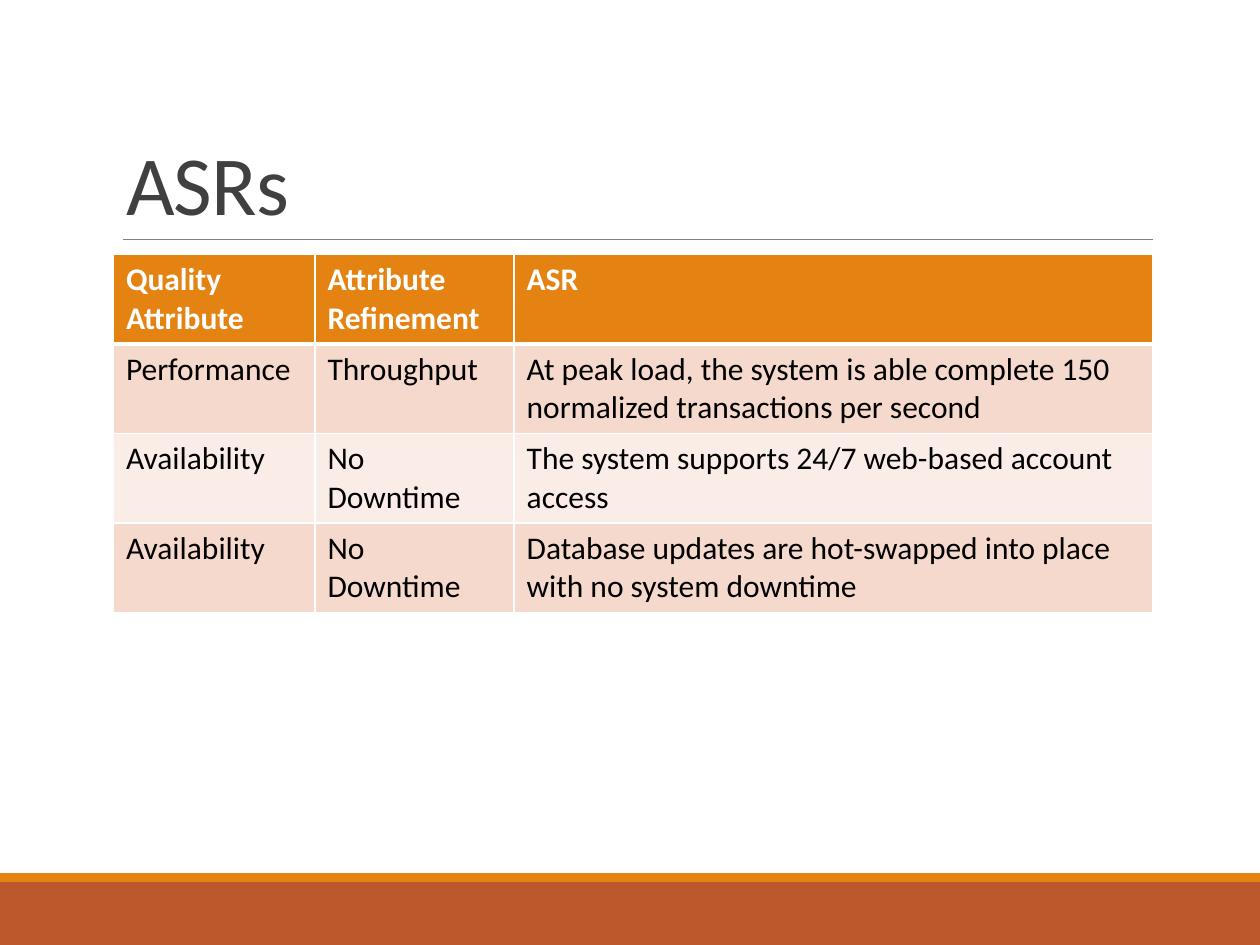
from lxml.etree import SubElement
from pptx import Presentation
from pptx.dml.color import RGBColor
from pptx.enum.shapes import MSO_CONNECTOR, MSO_SHAPE
from pptx.enum.text import MSO_ANCHOR, MSO_AUTO_SIZE, PP_ALIGN
from pptx.oxml.ns import qn
from pptx.util import Inches, Pt

WHITE = RGBColor(0xFF, 0xFF, 0xFF)
BLACK = RGBColor(0, 0, 0)
CHARCOAL = RGBColor(0x40, 0x40, 0x40)
GRAY = RGBColor(0x80, 0x80, 0x80)
ORANGE = RGBColor(0xE4, 0x83, 0x12)
RUST = RGBColor(0xBD, 0x58, 0x2C)
BANDS = [RGBColor(0xF5, 0xD9, 0xCC), RGBColor(0xFA, 0xED, 0xE7)]

WIDTH, HEIGHT = 10, 7.5
LEFT, CONTENT_WIDTH = 0.09, 0.825  # shares of the slide width

COLUMN_WIDTHS = [1.6, 1.58, 5.07]
ROW_HEIGHT = 0.7
ROWS = [
    ["Quality Attribute", "Attribute Refinement", "ASR"],
    ["Performance", "Throughput",
     "At peak load, the system is able complete 150 normalized transactions per second"],
    ["Availability", "No Downtime", "The system supports 24/7 web-based account access"],
    ["Availability", "No Downtime",
     "Database updates are hot-swapped into place with no system downtime"],
]


class SlideBuilder:
    """Holds the text style and the current slide; positions are shares of it."""

    font_name = "Calibri"

    def __init__(self, presentation):
        self.presentation = presentation
        self.slide = presentation.slides.add_slide(presentation.slide_layouts[5])

    def x(self, share):
        return int(self.presentation.slide_width * share)

    def y(self, share):
        return int(self.presentation.slide_height * share)

    def format_text(self, paragraph, size, color, bold=False):
        for run in paragraph.runs:
            run.font.name = self.font_name
            run.font.size = Pt(size)
            run.font.color.rgb = color
            run.font.bold = bold

    def band(self, top, height, color):
        shape = self.slide.shapes.add_shape(
            MSO_SHAPE.RECTANGLE, 0, self.y(top), self.x(1), self.y(height))
        shape.shadow.inherit = False
        shape.fill.solid()
        shape.fill.fore_color.rgb = color
        shape.line.fill.background()

    def rule(self, left, right, top):
        line = self.slide.shapes.add_connector(
            MSO_CONNECTOR.STRAIGHT, self.x(left), self.y(top), self.x(right), self.y(top))
        line.line.color.rgb = GRAY
        line.line.width = Pt(0.5)
        SubElement(line._element.spPr, qn("a:effectLst"))

    def title(self, text, top, height):
        title = self.slide.shapes.title
        title.left, title.top = self.x(LEFT), self.y(top)
        title.width, title.height = self.x(CONTENT_WIDTH), self.y(height)
        frame = title.text_frame
        frame.text = text
        frame.auto_size = MSO_AUTO_SIZE.NONE
        frame.vertical_anchor = MSO_ANCHOR.BOTTOM
        paragraph = frame.paragraphs[0]
        paragraph.alignment = PP_ALIGN.LEFT
        paragraph.line_spacing = 0.85
        self.format_text(paragraph, 48, CHARCOAL)
        paragraph.runs[0].font._element.set("spc", "-50")

    def cell_borders(self, cell, top, bottom):
        properties = cell._tc.get_or_add_tcPr()
        for side, width in (("L", 1), ("R", 1), ("T", top), ("B", bottom)):
            border = SubElement(properties, qn(f"a:ln{side}"), w=str(Pt(width)))
            fill = SubElement(border, qn("a:solidFill"))
            SubElement(fill, qn("a:srgbClr"), val=str(WHITE))

    def table(self, rows, top):
        table = self.slide.shapes.add_table(
            len(rows), len(COLUMN_WIDTHS), self.x(LEFT), self.y(top),
            self.x(CONTENT_WIDTH), Inches(ROW_HEIGHT * len(rows))).table
        for column, width in zip(table.columns, COLUMN_WIDTHS):
            column.width = Inches(width)
        for row_index, texts in enumerate(rows):
            header = row_index == 0
            for column_index, text in enumerate(texts):
                cell = table.cell(row_index, column_index)
                cell.text = text
                self.format_text(cell.text_frame.paragraphs[0], 18,
                                 WHITE if header else BLACK, bold=header)
                self.cell_borders(cell, top=3 if row_index == 1 else 1,
                                  bottom=3 if header else 1)
                cell.fill.solid()
                cell.fill.fore_color.rgb = ORANGE if header else BANDS[(row_index - 1) % 2]


def main():
    presentation = Presentation()
    presentation.slide_width = Inches(WIDTH)
    presentation.slide_height = Inches(HEIGHT)
    builder = SlideBuilder(presentation)

    # Footer bands
    builder.band(7 / HEIGHT, 0.5 / HEIGHT, RUST)
    builder.band(6.93 / HEIGHT, 0.07 / HEIGHT, ORANGE)

    # Title and the rule below it
    builder.rule(0.098, LEFT + CONTENT_WIDTH, 1.9 / HEIGHT)
    builder.title("ASRs", 0.31 / HEIGHT, 1.59 / HEIGHT)

    # Requirements table
    builder.table(ROWS, 2.02 / HEIGHT)

    presentation.save("out.pptx")


if __name__ == "__main__":
    main()
